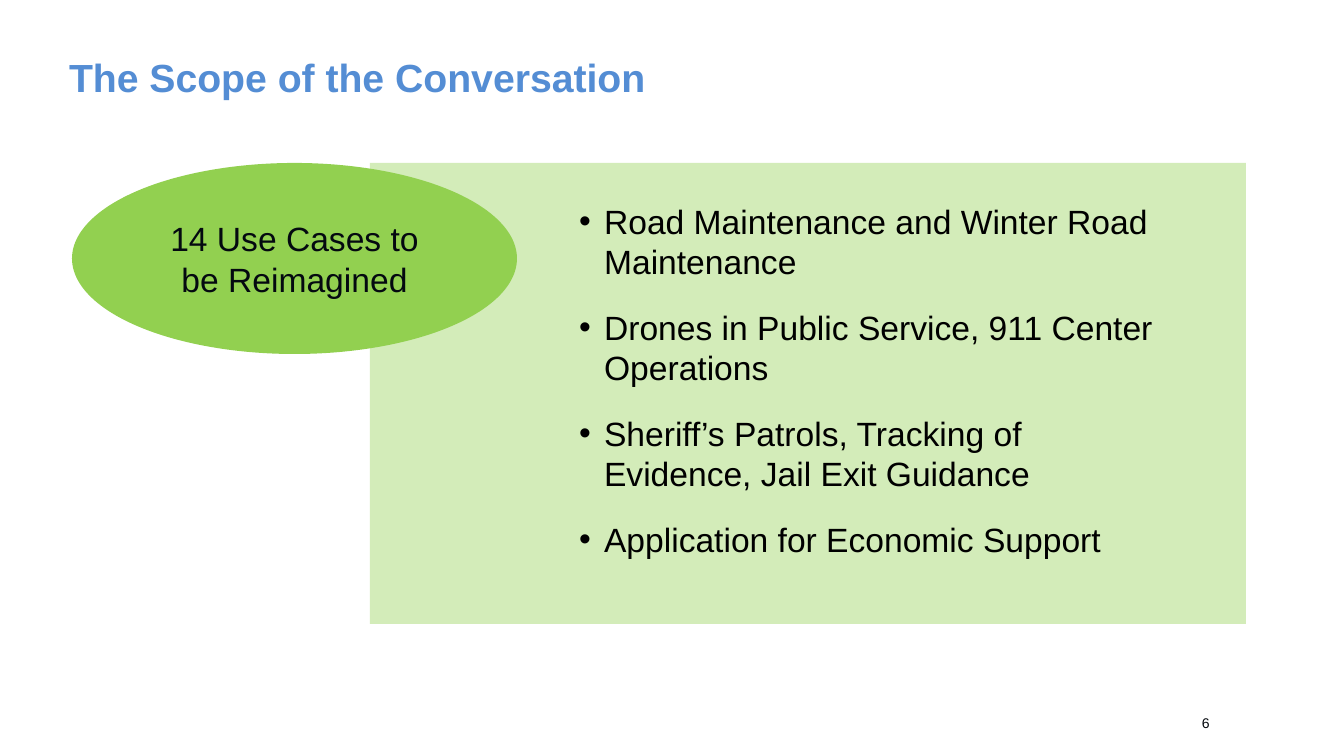
import pptx
import pptx.util
import pptx.dml.color
import pptx.enum.shapes
import pptx.enum.text
import pptx.oxml
import pptx.oxml.ns

# Content
TITLE = "The Scope of the Conversation"
BADGE = "14 Use Cases to\vbe Reimagined"
CASES = [
    "Road Maintenance and Winter Road Maintenance",
    "Drones in Public Service, 911 Center Operations",
    "Sheriff’s Patrols, Tracking of Evidence, Jail Exit Guidance",
    "Application for Economic Support",
]
PAGE = "6"
COLORS = {
    "title": "548DD4", "panel": "D3ECB9", "badge": "92D050",
    "list": "000000", "label": "040910", "page": "03070C",
}

# Layout in px: left, top, width, height
SIZE = 1344, 756
HEAD = 69, 52, 1142, 50
PANEL = 370, 163, 876, 461
OVAL = 72, 163, 445, 191
LIST = 569, 196, 619, 372
FOOT = 1202, 703, 44, 40
INDENT = 25

Shape = pptx.enum.shapes.MSO_SHAPE
Align = pptx.enum.text.PP_ALIGN
Anchor = pptx.enum.text.MSO_ANCHOR
Pt = pptx.util.Pt


def px(n):
    return round(n * 914400 / 100.8)


def color(name):
    return pptx.dml.color.RGBColor.from_string(COLORS[name])


def place(shape, box):
    shape.left, shape.top, shape.width, shape.height = map(px, box)


def style(para, size, name, align=Align.LEFT, bold=False):
    para.alignment = align
    font = para.font
    font.name, font.size, font.bold = "Arial", Pt(size), bold
    font.color.rgb = color(name)


def setup(frame, anchor, inset=None):
    frame.word_wrap = True
    frame.auto_size = pptx.enum.text.MSO_AUTO_SIZE.NONE
    frame.vertical_anchor = anchor
    if inset is not None:
        frame.margin_left = frame.margin_right = inset
        frame.margin_top = frame.margin_bottom = inset


def draw(slide, kind, box, name):
    shape = slide.shapes.add_shape(kind, *map(px, box))
    shape.shadow.inherit = False
    shape.fill.solid()
    shape.fill.fore_color.rgb = color(name)
    shape.line.fill.background()
    return shape


def bullet(para):
    props = para._p.get_or_add_pPr()
    props.set("marL", str(px(INDENT)))
    props.set("indent", str(-px(INDENT)))
    ns = pptx.oxml.ns.nsdecls("a")
    for xml in (
        f'<a:buClr {ns}><a:srgbClr val="{COLORS["list"]}"/></a:buClr>',
        f'<a:buFont {ns} typeface="Arial"/>',
        f'<a:buChar {ns} char="•"/>',
    ):
        node = pptx.oxml.parse_xml(xml)
        props.insert_element_before(node, "a:tabLst", "a:defRPr", "a:extLst")


def main():
    deck = pptx.Presentation()
    deck.slide_width, deck.slide_height = map(px, SIZE)
    slide = deck.slides.add_slide(deck.slide_layouts[1])
    title, body = slide.placeholders

    # Panel behind the text
    panel = draw(slide, Shape.RECTANGLE, PANEL, "panel")
    title._element.addprevious(panel._element)

    # Title
    place(title, HEAD)
    setup(title.text_frame, Anchor.MIDDLE, 0)
    title.text_frame.text = TITLE
    style(title.text_frame.paragraphs[0], 28, "title", bold=True)

    # Bulleted list
    place(body, LIST)
    setup(body.text_frame, Anchor.TOP)
    body.text_frame.text = "\n".join(CASES)
    for para in body.text_frame.paragraphs:
        style(para, 24, "list")
        para.space_before, para.space_after = Pt(0), Pt(18)
        bullet(para)

    # Oval label
    oval = draw(slide, Shape.OVAL, OVAL, "badge")
    setup(oval.text_frame, Anchor.MIDDLE)
    para = oval.text_frame.paragraphs[0]
    para.text = BADGE
    style(para, 24, "label", Align.CENTER)

    # Page number
    foot = slide.shapes.add_textbox(*map(px, FOOT))
    setup(foot.text_frame, Anchor.MIDDLE, 0)
    foot.text_frame.text = PAGE
    style(foot.text_frame.paragraphs[0], 10, "page")

    deck.save("out.pptx")


if __name__ == "__main__":
    main()
